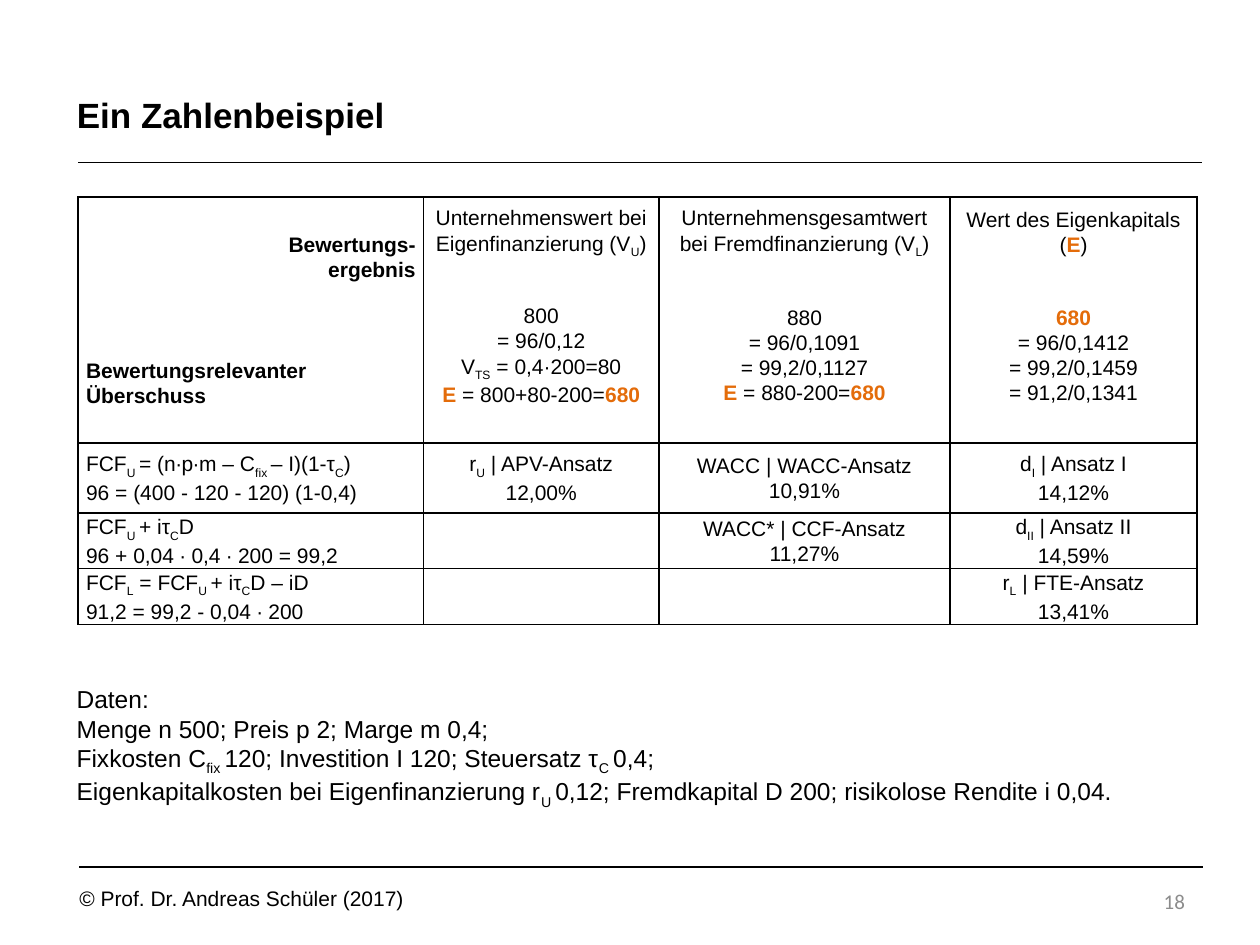
from dataclasses import dataclass

from lxml import etree
from pptx import Presentation
from pptx import util as u
from pptx.dml.color import RGBColor
from pptx.enum import shapes, text
from pptx.oxml import ns

Pt = u.Pt
LEFT, MID, RIGHT = text.PP_ALIGN.LEFT, text.PP_ALIGN.CENTER, text.PP_ALIGN.RIGHT


@dataclass(frozen=True)
class Theme:
    ink: str = "000000"
    mark: str = "E46C0A"
    grey: str = "8C8C8C"
    face: str = "Arial"
    num: str = "Calibri"
    head: int = 20
    body: int = 14
    small: int = 12
    lead: float = 1.07


T = Theme()

# In all texts {x} is a subscript and [x] is marked in bold colour.
COLS = (197.3, 134.6, 166.3, 141.2)
ROWS = (40, 100, 40, 32, 32)
CELLS = (
    (None,
     ("Unternehmenswert bei Eigenfinanzierung (V{U})",),
     ("Unternehmensgesamtwert bei Fremdfinanzierung (V{L})",),
     ("Wert des Eigenkapitals ([E])",)),
    (None,
     ("800", "= 96/0,12", "V{TS} = 0,4·200=80", "[E] = 800+80-200=[680]"),
     ("880", "= 96/0,1091", "= 99,2/0,1127", "[E] = 880-200=[680]"),
     ("[680]", "= 96/0,1412", "= 99,2/0,1459", "= 91,2/0,1341")),
    (("FCF{U }= (n∙p∙m – C{fix }– I)(1-τ{C})", "96 = (400 - 120 - 120) (1-0,4)"),
     ("r{U} | APV-Ansatz", "12,00%"),
     ("WACC | WACC-Ansatz", "10,91%"),
     ("d{I} | Ansatz I", "14,12%")),
    (("FCF{U }+ iτ{C}D", "96 + 0,04 ∙ 0,4 ∙ 200 = 99,2"),
     None,
     ("WACC* | CCF-Ansatz", "11,27%"),
     ("d{II} | Ansatz II", "14,59%")),
    (("FCF{L} = FCF{U }+ iτ{C}D – iD", "91,2 = 99,2 - 0,04 ∙ 200"),
     None,
     None,
     ("r{L} | FTE-Ansatz", "13,41%")),
)
CORNER = ("Bewertungs-ergebnis", "Bewertungsrelevanter", "Überschuss")
DATA = (
    "Daten:",
    "Menge n 500; Preis p 2; Marge m 0,4;",
    "Fixkosten C{fix }120; Investition I 120; Steuersatz τ{C }0,4;",
    "Eigenkapitalkosten bei Eigenfinanzierung r{U }0,12; "
    "Fremdkapital D 200; risikolose Rendite i 0,04.",
)


def put(obj, **vals):
    for key, val in vals.items():
        setattr(obj, key, val)


def split(line):
    """Yield (kind, text) pieces; kind is '', '{' or '['."""
    kind, part = "", ""
    for char in line:
        if char in "{}[]":
            if part:
                yield kind, part
            kind, part = (char if char in "{[" else ""), ""
        else:
            part += char
    if part:
        yield kind, part


def write(frame, lines, size, align=LEFT, bold=False, color=T.ink, face=T.face,
          lead=None):
    for i, line in enumerate(lines):
        para = frame.paragraphs[0] if i == 0 else frame.add_paragraph()
        put(para, alignment=align, line_spacing=lead)
        for kind, part in split(line):
            run = para.add_run()
            run.text = part
            put(run.font, name=face, size=Pt(size), bold=bold or kind == "[")
            run.font.color.rgb = RGBColor.from_string(T.mark if kind == "[" else color)
            if kind == "{":
                run._r.get_or_add_rPr().set("baseline", "-25000")


def label(slide, box, lines, size, anchor=text.MSO_ANCHOR.TOP, **style):
    frame = slide.shapes.add_textbox(*map(Pt, box)).text_frame
    put(frame, word_wrap=True, vertical_anchor=anchor)
    write(frame, lines, size, **style)


def rule(slide, x, y, width):
    line = slide.shapes.add_connector(
        shapes.MSO_CONNECTOR.STRAIGHT, Pt(x), Pt(y), Pt(x + width), Pt(y))
    line.line.width = Pt(0.75)
    line.line.color.rgb = RGBColor.from_string(T.ink)
    etree.SubElement(line._element.spPr, ns.qn("a:effectLst"))


def edge(cell, skip):
    """Draw the cell's borders, except on the side named in skip."""
    props = cell._tc.get_or_add_tcPr()
    for side in "LRTB":
        line = etree.SubElement(props, ns.qn("a:ln" + side), w=str(Pt(1)))
        if side == skip:
            etree.SubElement(line, ns.qn("a:noFill"))
        else:
            fill = etree.SubElement(line, ns.qn("a:solidFill"))
            etree.SubElement(fill, ns.qn("a:srgbClr"), val=T.ink)


def corner(cell):
    write(cell.text_frame, CORNER, T.small, bold=True, lead=T.lead)
    first, second = cell.text_frame.paragraphs[:2]
    first.alignment = RIGHT
    first._p.get_or_add_pPr().set("marL", str(Pt(100)))
    second.space_before = Pt(43)


def grid(slide):
    frame = slide.shapes.add_table(
        len(ROWS), len(COLS), Pt(44.7), Pt(112.5), Pt(sum(COLS)), Pt(sum(ROWS)))
    table = frame.table
    put(table, first_row=False, horz_banding=False)
    for col, width in zip(table.columns, COLS):
        col.width = Pt(width)
    for row, height in zip(table.rows, ROWS):
        row.height = Pt(height)
    table.cell(0, 0).merge(table.cell(1, 0))
    for i, row in enumerate(CELLS):
        for j, lines in enumerate(row):
            cell = table.cell(i, j)
            put(cell, margin_left=Pt(4.5), margin_right=Pt(4.5), margin_top=0,
                margin_bottom=0, vertical_anchor=text.MSO_ANCHOR.MIDDLE)
            edge(cell, {0: "B", 1: "T"}.get(i) if j else None)
            cell.fill.background()
            if lines:
                write(cell.text_frame, lines, T.small, MID if j else LEFT, lead=T.lead)
    corner(table.cell(0, 0))


def title(slide, line):
    shape = slide.shapes.title
    put(shape, left=Pt(36.7), top=Pt(34.6), width=Pt(648), height=Pt(61.2))
    shape.text_frame.vertical_anchor = text.MSO_ANCHOR.MIDDLE
    write(shape.text_frame, [line], T.head, bold=True)


def main():
    deck = Presentation()
    put(deck, slide_width=Pt(720), slide_height=Pt(540))
    slide = deck.slides.add_slide(deck.slide_layouts[5])
    title(slide, "Ein Zahlenbeispiel")
    rule(slide, 44.6, 92.9, 642)
    grid(slide)
    label(slide, (36.7, 387.4, 640, 75), DATA, T.body)
    rule(slide, 45.4, 495.4, 642)
    label(slide, (38.2, 502.6, 216.7, 21.6), ["© Prof. Dr. Andreas Schüler (2017)"], T.small)
    label(slide, (516.2, 500.4, 168, 28.8), ["18"], T.small, text.MSO_ANCHOR.MIDDLE,
          align=RIGHT, color=T.grey, face=T.num)
    deck.save("out.pptx")


if __name__ == "__main__":
    main()
